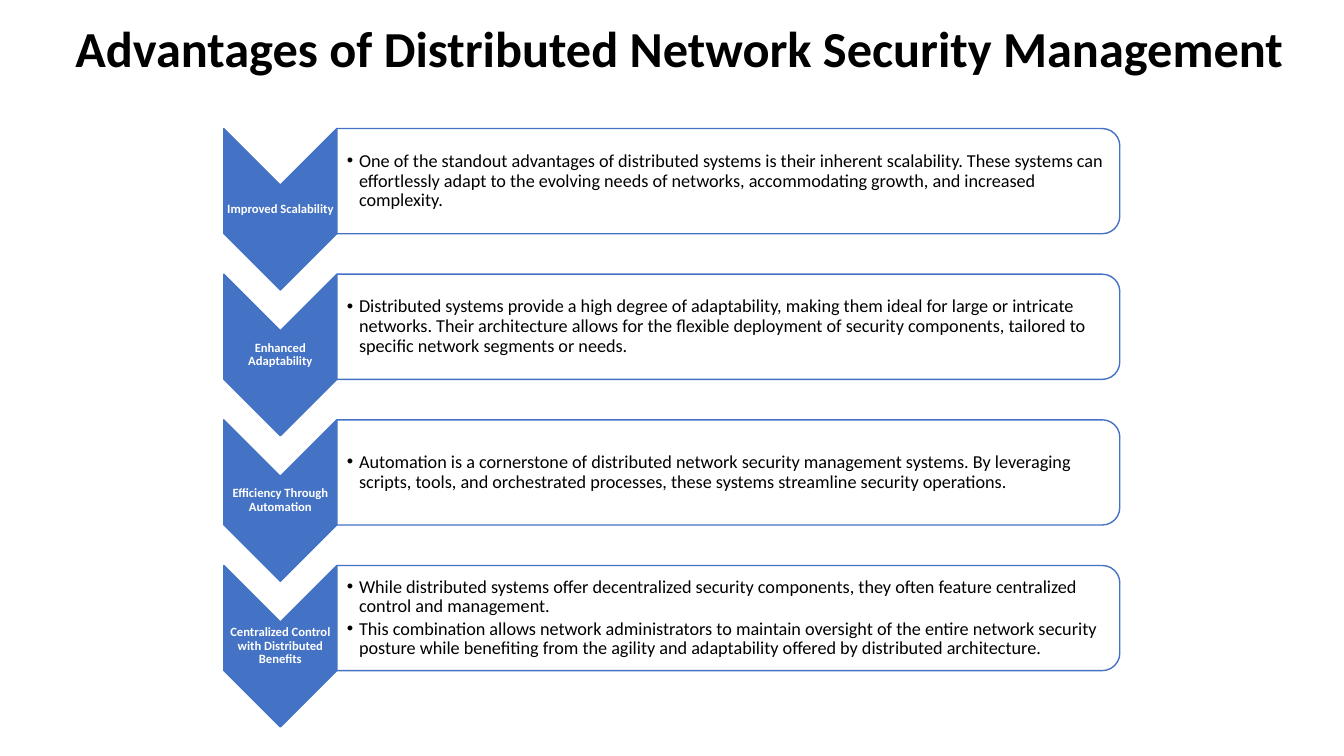
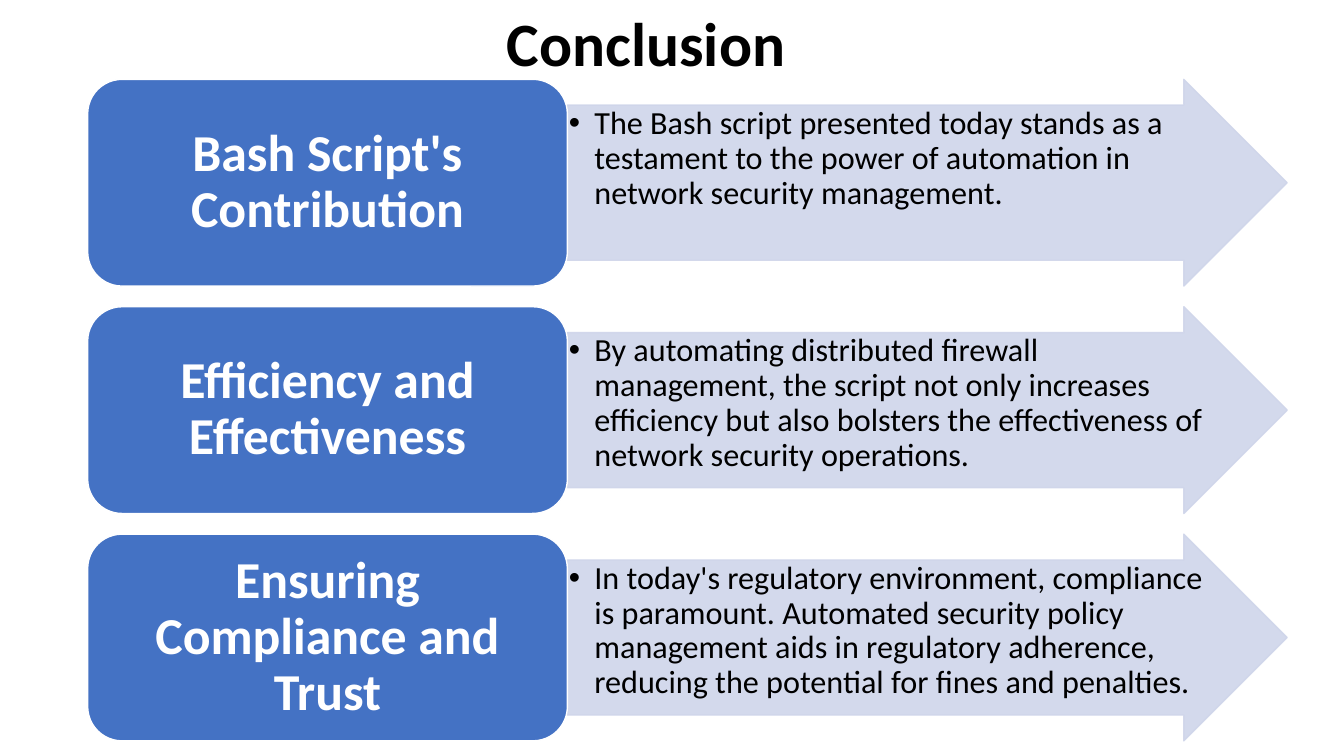
import pptx
import pptx.dml.color
import pptx.enum.shapes
import pptx.enum.text
import pptx.oxml.ns
import pptx.util
from lxml import etree

Cm = pptx.util.Cm
Pt = pptx.util.Pt
qn = pptx.oxml.ns.qn
SHAPE = pptx.enum.shapes.MSO_SHAPE
ALIGN = pptx.enum.text.PP_ALIGN
ANCHOR = pptx.enum.text.MSO_ANCHOR

FONT = "Calibri"
BLUE, PALE, WHITE, BLACK = "4472C4", "CFD5EA", "FFFFFF", "000000"

ADVANTAGES = [
    ("Improved Scalability",
     ["One of the standout advantages of distributed systems is their inherent scalability. "
      "These systems can effortlessly adapt to the evolving needs of networks, accommodating "
      "growth, and increased complexity."]),
    ("Enhanced Adaptability",
     ["Distributed systems provide a high degree of adaptability, making them ideal for large "
      "or intricate networks. Their architecture allows for the flexible deployment of security "
      "components, tailored to specific network segments or needs."]),
    ("Efficiency Through Automation",
     ["Automation is a cornerstone of distributed network security management systems. By "
      "leveraging scripts, tools, and orchestrated processes, these systems streamline security "
      "operations."]),
    ("Centralized Control with Distributed Benefits",
     ["While distributed systems offer decentralized security components, they often feature "
      "centralized control and management.",
      "This combination allows network administrators to maintain oversight of the entire "
      "network security posture while benefiting from the agility and adaptability offered by "
      "distributed architecture."]),
]

CONCLUSIONS = [
    ("Bash Script's Contribution",
     "The Bash script presented today stands as a testament to the power of automation in "
     "network security management."),
    ("Efficiency and Effectiveness",
     "By automating distributed firewall management, the script not only increases efficiency "
     "but also bolsters the effectiveness of network security operations."),
    ("Ensuring Compliance and Trust",
     "In today's regulatory environment, compliance is paramount. Automated security policy "
     "management aids in regulatory adherence, reducing the potential for fines and penalties."),
]


def rgb(color):
    return pptx.dml.color.RGBColor.from_string(color)


def set_bullet(p, indent):
    pPr = p._p.get_or_add_pPr()
    pPr.set("marL", str(Cm(indent)))
    pPr.set("indent", str(-Cm(indent)))
    etree.SubElement(pPr, qn("a:buFont"), typeface="Arial")
    etree.SubElement(pPr, qn("a:buChar"), char="•")


def write(sp, *texts, size, color=BLACK, bold=False, align=ALIGN.CENTER,
          anchor=ANCHOR.MIDDLE, insets=(0.03, 0.03, 0.03, 0.03), spacing=0.9, bullet=None):
    """Write one paragraph per text; insets are left, top, right, bottom in cm."""
    tf = sp.text_frame
    tf.word_wrap = True
    tf.vertical_anchor = anchor
    tf.margin_left, tf.margin_top, tf.margin_right, tf.margin_bottom = map(Cm, insets)
    for i, text in enumerate(texts):
        p = tf.add_paragraph() if i else tf.paragraphs[0]
        p.alignment = align
        p.line_spacing = spacing
        if bullet:
            p.space_after = Pt(size * 0.15)
            set_bullet(p, bullet)
        r = p.add_run()
        r.text = text
        r.font.name, r.font.size, r.font.bold = FONT, Pt(size), bold
        r.font.color.rgb = rgb(color)


def add_text(s, x, y, w, h, *texts, **style):
    write(s.shapes.add_textbox(Cm(x), Cm(y), Cm(w), Cm(h)), *texts, **style)


def add_title(s, x, y, w, h, text, size):
    add_text(s, x, y, w, h, text, size=size, bold=True, spacing=1,
             anchor=ANCHOR.TOP, insets=(0.25, 0.13, 0.25, 0.13))


def set_alpha(fill_parent, percent):
    for clr in fill_parent.iter(qn("a:srgbClr")):
        etree.SubElement(clr, qn("a:alpha"), val=str(percent * 1000))


def add_shape(s, kind, x, y, w, h, fill, line):
    sp = s.shapes.add_shape(kind, Cm(x), Cm(y), Cm(w), Cm(h))
    sp.shadow.inherit = False
    sp.fill.solid()
    sp.fill.fore_color.rgb = rgb(fill)
    sp.line.color.rgb = rgb(line)
    sp.line.width = Pt(1)
    return sp


def add_turned(s, kind, x, y, w, h, fill, line):
    """Add a shape turned 90 degrees so that it covers the given box."""
    sp = add_shape(s, kind, x + (w - h) / 2, y + (h - w) / 2, h, w, fill, line)
    sp.rotation = 90
    return sp


def advantage_row(s, y, label, points):
    x, chevron_w, panel_w = 5.64, 2.85, 19.73
    panel_x = x + chevron_w
    add_turned(s, SHAPE.CHEVRON, x, y, chevron_w, 4.07, BLUE, BLUE)
    add_text(s, x, y + 1.42, chevron_w, 1.22, label, size=9, color=WHITE, bold=True)
    add_turned(s, SHAPE.ROUND_2_SAME_RECTANGLE, panel_x, y, panel_w, 2.65, WHITE, BLUE)
    add_text(s, panel_x, y + 0.13, panel_w - 0.13, 2.39, *points, size=13,
             align=ALIGN.LEFT, insets=(0.25, 0.03, 0.03, 0.03), bullet=0.31)


def conclusion_row(s, y, label, point):
    x, box_w, h = 2.21, 12.09, 5.21
    arrow = add_shape(s, SHAPE.RIGHT_ARROW, x + box_w, y, 18.14, h, PALE, PALE)
    arrow.adjustments[0] = 0.75
    arrow.adjustments[1] = 0.5
    set_alpha(arrow._element.spPr, 90)
    write(arrow, point, size=23, align=ALIGN.LEFT, anchor=ANCHOR.TOP,
          insets=(0.04, 0.04, 0.04, 0.04), bullet=0.64)
    box = add_shape(s, SHAPE.ROUNDED_RECTANGLE, x, y, box_w, h, BLUE, WHITE)
    write(box, label, size=37, color=WHITE, bold=True, insets=(0.39, 0.2, 0.39, 0.2))


def add_rows(s, draw_row, top, pitch, rows):
    for i, (label, content) in enumerate(rows):
        draw_row(s, top + i * pitch, label, content)


def main():
    prs = pptx.Presentation()
    prs.slide_width, prs.slide_height = Cm(33.87), Cm(19.05)
    blank = prs.slide_layouts[6]

    s = prs.slides.add_slide(blank)
    add_title(s, 0.4, 0.3, 33.46, 1.8,
              "Advantages of Distributed Network Security Management", 36)
    add_rows(s, advantage_row, 3.24, 3.67, ADVANTAGES)

    s = prs.slides.add_slide(blank)
    add_title(s, 7.82, 0, 16.94, 2.13, "Conclusion", 44)
    add_rows(s, conclusion_row, 2, 5.73, CONCLUSIONS)

    prs.save("out.pptx")


if __name__ == "__main__":
    main()
